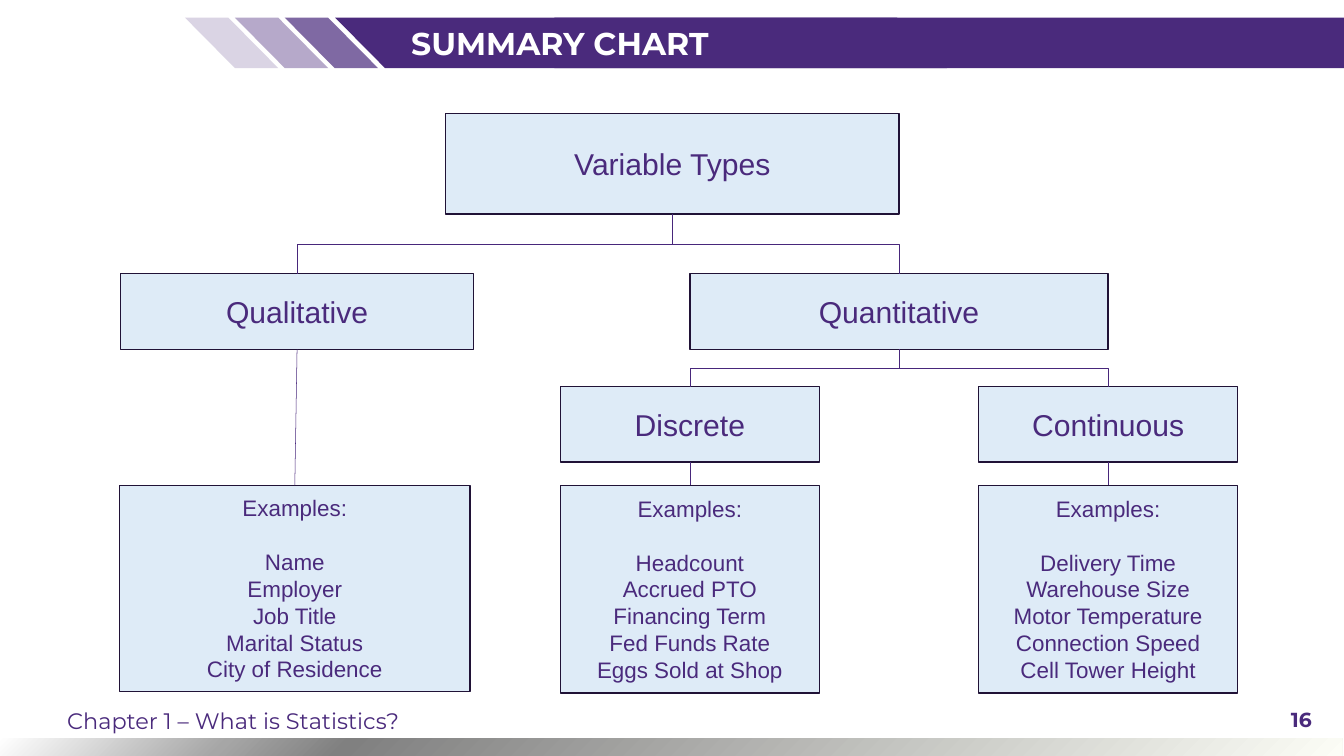
import pptx
import pptx.util
import pptx.oxml
import pptx.oxml.ns
import pptx.dml.color
import pptx.enum.shapes
import pptx.enum.text

Inches = pptx.util.Inches
Pt = pptx.util.Pt
Shape = pptx.enum.shapes.MSO_SHAPE
Link = pptx.enum.shapes.MSO_CONNECTOR
Align = pptx.enum.text.PP_ALIGN
Anchor = pptx.enum.text.MSO_ANCHOR
qn = pptx.oxml.ns.qn

HUES = {
    "purple": "4A2A7C", "link": "48277B", "edge": "201236",
    "box": "DEEBF7", "white": "FFFFFF",
}
TOP, BOTTOM = 0, 2
STOPS = [(0, "FCFDF6"), (74, "808080"), (83, "A6A6A6"), (100, "FFFFFF")]


def hue(name):
    return pptx.dml.color.RGBColor.from_string(HUES[name])


def node(text):
    space = pptx.oxml.ns.nsdecls("a")
    return pptx.oxml.parse_xml(text.replace(">", f" {space}>", 1))


def write(frame, lines, size=32, font="Arial", color="purple", bold=False,
          align=Align.CENTER, inset=(0.1, 0.05), gap=0):
    """Fill a text frame; gap is the space in points after the first line."""
    frame.word_wrap = True
    frame.auto_size = pptx.enum.text.MSO_AUTO_SIZE.NONE
    frame.vertical_anchor = Anchor.MIDDLE
    frame.margin_left = frame.margin_right = Inches(inset[0])
    frame.margin_top = frame.margin_bottom = Inches(inset[1])
    for i, line in enumerate(lines):
        para = frame.paragraphs[0] if i == 0 else frame.add_paragraph()
        para.alignment = align
        para.space_before = Pt(0)
        para.space_after = Pt(gap if i == 0 else 0)
        run = para.add_run()
        run.text = line
        run.font.size, run.font.bold, run.font.name = Pt(size), bold, font
        run.font.color.rgb = hue(color)


def shape(slide, kind, place, fill="purple"):
    item = slide.shapes.add_shape(kind, *map(Inches, place))
    item.shadow.inherit = False
    item.fill.solid()
    item.fill.fore_color.rgb = hue(fill)
    item.line.fill.background()
    return item


def box(slide, place, lines, **style):
    item = shape(slide, Shape.RECTANGLE, place, "box")
    item.line.color.rgb = hue("edge")
    item.line.width = Pt(2)
    write(item.text_frame, lines, **style)
    return item


def label(slide, place, text, **style):
    item = slide.shapes.add_textbox(*map(Inches, place))
    write(item.text_frame, [text], font="Montserrat", inset=(0.24, 0.12), **style)


def stripe(slide, left, width, alpha=100):
    """Draw a slanted band that leans to the left at its top."""
    item = shape(slide, Shape.PARALLELOGRAM, (left, 0.35, width, 1))
    item.adjustments[0] = 0.99
    item.rotation = 180
    item.element.spPr.find(qn("a:xfrm")).set("flipH", "1")
    if alpha < 100:
        tint = item.element.spPr.find(qn("a:solidFill"))[0]
        tint.append(node(f'<a:alpha val="{alpha * 1000}"/>'.replace("/>", "></a:alpha>")))


def footer(slide):
    bar = shape(slide, Shape.RECTANGLE, (-0.03, 14.65, 26.67, 0.35))
    stops = "".join(f'<a:gs pos="{pos * 1000}"><a:srgbClr val="{tone}"/></a:gs>'
                    for pos, tone in STOPS)
    old = bar.element.spPr.find(qn("a:solidFill"))
    old.getparent().replace(old, node(
        f'<a:gradFill rotWithShape="1"><a:gsLst>{stops}</a:gsLst>'
        '<a:path path="circle"><a:fillToRect l="100000" t="100000"/></a:path>'
        '<a:tileRect r="-100000" b="-100000"/></a:gradFill>'))


def header(slide, text):
    stripe(slide, 6.65, 12.14)
    for i, alpha in enumerate((20, 40, 70)):
        stripe(slide, 3.67 + 0.99 * i, 1.85, alpha)
    shape(slide, Shape.RECTANGLE, (11, 0.35, 15.67, 1))
    title = slide.shapes.title
    title.left, title.top = Inches(7.92), Inches(0.38)
    title.width, title.height = Inches(17.92), Inches(0.95)
    write(title.text_frame, [text], size=45, font="Montserrat", color="white",
          bold=True, align=Align.LEFT, inset=(0.24, 0.12))
    title.element.getparent().append(title.element)


def join(slide, top, low, kind=Link.STRAIGHT):
    line = slide.shapes.add_connector(kind, 0, 0, 0, 0)
    line.begin_connect(top, BOTTOM)
    line.end_connect(low, TOP)
    line.line.color.rgb = hue("link")
    line.line.width = Pt(0.75)
    line.element.spPr.append(node("<a:effectLst></a:effectLst>"))
    return line


def branch(slide, top, low):
    """Join two boxes by an elbow that leaves downwards."""
    line = join(slide, top, low, Link.ELBOW)
    x1, y1, x2, y2 = line.begin_x, line.begin_y, line.end_x, line.end_y
    wide, tall = abs(x2 - x1), y2 - y1
    frame = line.element.spPr.find(qn("a:xfrm"))
    frame.set("flipH", "1" if x2 > x1 else "0")
    frame.set("rot", str((270 if x2 > x1 else 90) * 60000))
    line.left = (x1 + x2 - tall) // 2
    line.top = (y1 + y2 - wide) // 2
    line.width, line.height = tall, wide


def chart(slide):
    root = box(slide, (8.84, 2.25, 9, 2), ["Variable Types"], size=43)
    qual = box(slide, (2.39, 5.43, 7.01, 1.5), ["Qualitative"], size=43)
    quant = box(slide, (13.69, 5.43, 8.3, 1.5), ["Quantitative"], size=43)
    disc = box(slide, (11.12, 7.67, 5.14, 1.5), ["Discrete"], size=43)
    cont = box(slide, (19.42, 7.67, 5.14, 1.5), ["Continuous"], size=43)
    for top, low in ((root, qual), (root, quant), (quant, disc), (quant, cont)):
        branch(slide, top, low)
    lists = [
        (qual, 2.37, 6.96, 4.09, ["Name", "Employer", "Job Title",
                                  "Marital Status", "City of Residence"]),
        (disc, 11.12, 5.14, 4.12, ["Headcount", "Accrued PTO", "Financing Term",
                                   "Fed Funds Rate", "Eggs Sold at Shop"]),
        (cont, 19.42, 5.14, 4.12, ["Delivery Time", "Warehouse Size",
                                   "Motor Temperature", "Connection Speed",
                                   "Cell Tower Height"]),
    ]
    for top, left, width, height, names in lists:
        low = box(slide, (left, 9.63, width, height), ["Examples:"] + names, gap=38)
        join(slide, top, low)


def main():
    deck = pptx.Presentation()
    deck.slide_width, deck.slide_height = Inches(26.67), Inches(15)
    slide = deck.slides.add_slide(deck.slide_layouts[5])
    footer(slide)
    header(slide, "SUMMARY CHART")
    chart(slide)
    label(slide, (1.09, 13.9, 19.67, 0.8), "Chapter 1 – What is Statistics?",
          align=Align.LEFT)
    label(slide, (21.13, 13.88, 5.14, 0.8), "16", size=29, bold=True,
          align=Align.RIGHT)
    deck.save("out.pptx")


if __name__ == "__main__":
    main()
